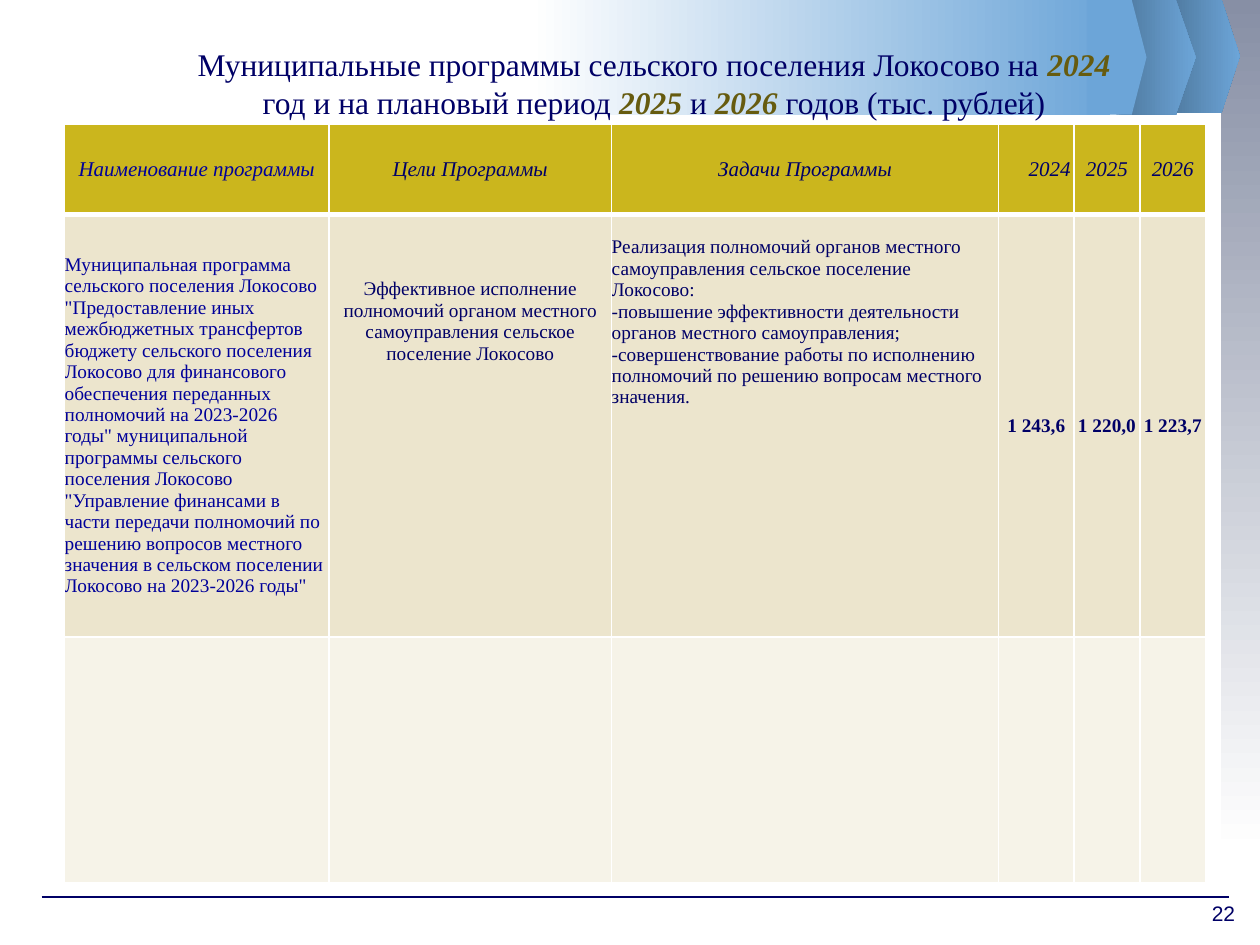
from pptx import Presentation
from pptx.dml.color import RGBColor
from pptx.enum.shapes import MSO_CONNECTOR, MSO_SHAPE
from pptx.enum.text import MSO_ANCHOR, PP_ALIGN
from pptx.oxml.ns import qn
from pptx.util import Pt
from lxml import etree

RECT, PLATE = MSO_SHAPE.RECTANGLE, MSO_SHAPE.PENTAGON
LINE = MSO_CONNECTOR.STRAIGHT
LEFT, MID, RIGHT = PP_ALIGN.LEFT, PP_ALIGN.CENTER, PP_ALIGN.RIGHT
TOP, CENTER, BOTTOM = MSO_ANCHOR.TOP, MSO_ANCHOR.MIDDLE, MSO_ANCHOR.BOTTOM
SERIF = "Times New Roman"

COLORS = {
    "white": "FFFFFF", "gray": "878FA5", "steel": "4D769B", "sky": "6CA5D8",
    "navy": "000066", "blue": "000099", "olive": "665B0F",
    "gold": "CBB61D", "sand": "ECE5CD", "cream": "F6F3E8",
}


def style(run, size, color, font=SERIF, bold=False, italic=False):
    run.font.size = Pt(size)
    run.font.name = font
    run.font.bold = bold
    run.font.italic = italic
    run.font.color.rgb = RGBColor.from_string(COLORS[color])


def edge(cell, widths):
    props = cell._tc.get_or_add_tcPr()
    for i, (side, width) in enumerate(zip("LRTB", widths)):
        line = etree.Element(qn(f"a:ln{side}"), w=str(Pt(width)))
        fill = etree.SubElement(line, qn("a:solidFill"))
        etree.SubElement(fill, qn("a:srgbClr"), val=COLORS["white"])
        props.insert(i, line)


deck = Presentation()
deck.slide_width, deck.slide_height = Pt(720), Pt(540)
slide = deck.slides.add_slide(deck.slide_layouts[6])
shapes = slide.shapes

# Side band and top ribbon
bands = [
    (RECT, 697.7, 0, 22.3, 487.4, "gray", "white", 270),
    (PLATE, 666, -0.7, 42.5, 65.5, "steel", "sky", 0),
    (PLATE, 637.9, 0, 45.4, 65.5, "steel", "sky", 0),
    (RECT, 303.1, 0, 331.2, 65.5, "white", "sky", 0),
    (PLATE, 621.4, 0, 33.8, 65.5, "sky", "sky", 0),
]
for kind, x, y, w, h, start, end, angle in bands:
    band = shapes.add_shape(kind, Pt(x), Pt(y), Pt(w), Pt(h))
    band.shadow.inherit = False
    band.line.fill.background()
    if kind == PLATE:
        band.adjustments[0] = 0.25
    if start == end:
        band.fill.solid()
        band.fill.fore_color.rgb = RGBColor.from_string(COLORS[start])
        continue
    band.fill.gradient()
    band.fill.gradient_angle = angle
    for stop, color in zip(band.fill.gradient_stops, (start, end)):
        stop.color.rgb = RGBColor.from_string(COLORS[color])

# Footer rule
rule = shapes.add_connector(LINE, Pt(23.8), Pt(512.6), Pt(702), Pt(512.6))
rule.line.width = Pt(0.75)
rule.line.color.rgb = RGBColor.from_string(COLORS["navy"])
etree.SubElement(rule._element.spPr, qn("a:effectLst"))

# Title
title = shapes.add_textbox(Pt(95.8), Pt(28.1), Pt(555.8), Pt(48.2))
frame = title.text_frame
frame.word_wrap = True
frame.vertical_anchor = BOTTOM
frame.margin_top, frame.margin_bottom = 0, Pt(7.4)
para = frame.paragraphs[0]
para.alignment = MID
parts = ["Муниципальные программы сельского поселения Локосово на ", "2024",
         " год и на плановый период ", "2025", " и ", "2026",
         " годов (тыс. рублей)"]
for i, part in enumerate(parts):
    run = para.add_run()
    run.text = part
    year = i % 2 == 1
    style(run, 18, "olive" if year else "navy", bold=year, italic=year)

# Programme table
heads = ["Наименование программы", "Цели Программы", "Задачи Программы",
         "2024", "2025", "2026"]
name = ('Муниципальная программа сельского поселения Локосово '
        '"Предоставление иных межбюджетных трансфертов бюджету сельского '
        'поселения Локосово для финансового обеспечения переданных полномочий '
        'на 2023-2026 годы" муниципальной программы сельского поселения '
        'Локосово "Управление финансами в части передачи полномочий по '
        'решению вопросов местного значения в сельском поселении Локосово '
        'на 2023-2026 годы"')
goal = ("Эффективное исполнение полномочий органом местного "
        "самоуправления сельское поселение Локосово")
tasks = ("Реализация полномочий органов местного самоуправления "
         "сельское поселение Локосово:\n"
         "-повышение эффективности деятельности органов местного "
         "самоуправления;\n"
         "-совершенствование работы по исполнению полномочий по решению "
         "вопросам местного значения.")
rows = [heads, [name, goal, tasks, "1 243,6", "1 220,0", "1 223,7"], [""] * 6]
fills = ["gold", "sand", "cream"]
widths = [150.9, 161.7, 221, 43.2, 37.6, 37.6]
heights = [51.8, 241.2, 140.4]
insets = {1: 36.5, 2: 12.6}  # top gap of the goal and task cells

grid = shapes.add_table(3, 6, Pt(37), Pt(70.9), Pt(652), Pt(433.4)).table
grid.first_row = grid.horz_banding = False
for col, width in zip(grid.columns, widths):
    col.width = Pt(width)
for row, height in zip(grid.rows, heights):
    row.height = Pt(height)

for r, row in enumerate(rows):
    for c, text in enumerate(row):
        cell = grid.cell(r, c)
        cell.fill.solid()
        cell.fill.fore_color.rgb = RGBColor.from_string(COLORS[fills[r]])
        edge(cell, (1, 1, 3 if r == 1 else 1, 3 if r == 0 else 1))
        if not text:
            continue
        cell.margin_left = cell.margin_right = 0
        cell.margin_top = cell.margin_bottom = 0
        cell.vertical_anchor = CENTER
        align = MID
        if r == 0 and c == 3:
            align = RIGHT
            cell.margin_right = Pt(2)
        if r == 1 and c in insets:
            cell.vertical_anchor = TOP
            cell.margin_top = Pt(insets[c])
        if r == 1 and c in (0, 2):
            align = LEFT
        cell.text_frame.text = text
        for para in cell.text_frame.paragraphs:
            para.alignment = align
            style(para.runs[0], 12 if r == 0 else 11,
                  "blue" if c == 0 else "navy",
                  bold=r == 1 and c > 2, italic=r == 0)

# Page number
page = shapes.add_textbox(Pt(685.4), Pt(511.2), Pt(28.1), Pt(21.6))
page.text_frame.word_wrap = False
page.text_frame.text = "22"
style(page.text_frame.paragraphs[0].runs[0], 12, "navy", font="Arial")

deck.save("out.pptx")
